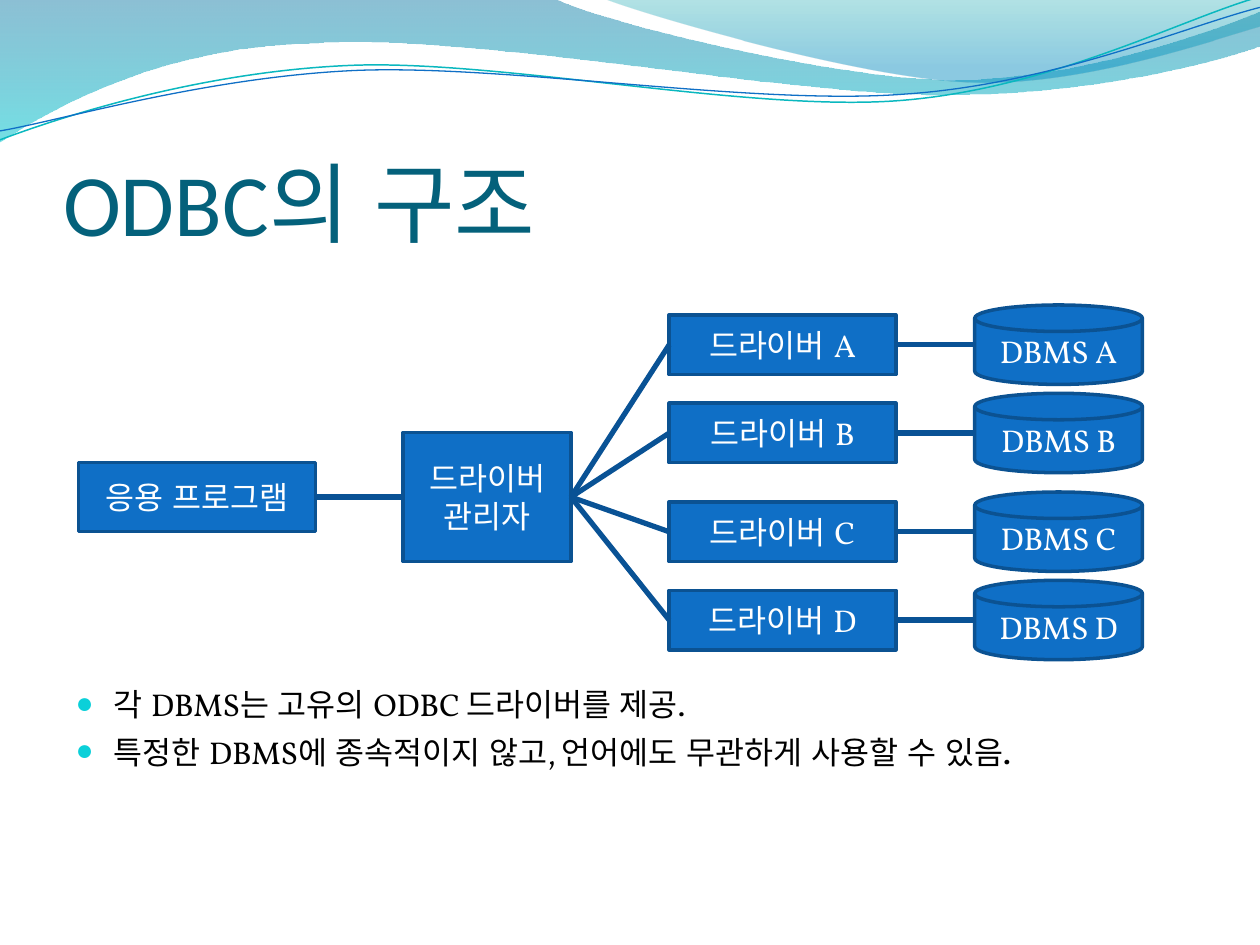
import pptx
import pptx.dml.color
import pptx.enum.lang
import pptx.enum.shapes
import pptx.enum.text
import pptx.oxml.ns
import pptx.util
from dataclasses import dataclass
from lxml import etree

Cm = pptx.util.Cm
Pt = pptx.util.Pt
SHAPE = pptx.enum.shapes.MSO_SHAPE
ALIGN = pptx.enum.text.PP_ALIGN
ANCHOR = pptx.enum.text.MSO_ANCHOR
qn = pptx.oxml.ns.qn


@dataclass(frozen=True)
class Theme:
    heading_font: str = "Calibri"
    text_font: str = "Vollkorn"
    heading: str = "04617B"
    text: str = "000000"
    on_box: str = "FFFFFF"
    box: str = "0F6FC6"
    outline: str = "0B5292"
    link: str = "095295"
    bullet: str = "0BD0D9"
    wave_teal: str = "0AB8BF"
    wave_blue: str = "0F6FC6"
    heading_size: float = 50
    text_size: float = 18
    stop_size: float = 20


def color(code):
    return pptx.dml.color.RGBColor.from_string(code)


class SlideBuilder:
    def __init__(self, page, theme):
        self.page = page
        self.theme = theme

    def style(self, para, size, code, font):
        para.font.size = Pt(size)
        para.font.name = font
        para.font.color.rgb = color(code)
        for span in para.runs:
            span.font.language_id = pptx.enum.lang.MSO_LANGUAGE_ID.KOREAN

    def place(self, box, left, top, width, height):
        box.left, box.top = Cm(left), Cm(top)
        box.width, box.height = Cm(width), Cm(height)

    def title(self, text, *frame):
        box = self.page.shapes.title
        self.place(box, *frame)
        body = box.text_frame
        body.text = text
        body.auto_size = pptx.enum.text.MSO_AUTO_SIZE.NONE
        body.vertical_anchor = ANCHOR.BOTTOM
        body.margin_left = body.margin_right = body.margin_bottom = 0
        para = body.paragraphs[0]
        para.alignment = ALIGN.LEFT
        self.style(para, self.theme.heading_size, self.theme.heading, self.theme.heading_font)

    def bullets(self, lines, top_margin, *frame):
        box = self.page.placeholders[1]
        self.place(box, *frame)
        body = box.text_frame
        body.auto_size = pptx.enum.text.MSO_AUTO_SIZE.NONE
        body.margin_top = Cm(top_margin)
        body.text = "\n".join(lines)
        for para in body.paragraphs:
            para.space_before = Pt(4)
            props = para._p.get_or_add_pPr()
            props.set("marL", str(Cm(0.76)))
            props.set("indent", str(-Cm(0.76)))
            tint = etree.SubElement(props, qn("a:buClr"))
            etree.SubElement(tint, qn("a:srgbClr"), val=self.theme.bullet)
            etree.SubElement(props, qn("a:buSzPct"), val="95000")
            etree.SubElement(props, qn("a:buChar"), char="●")
            self.style(para, self.theme.text_size, self.theme.text, self.theme.text_font)
        return body.paragraphs

    def node(self, kind, text, left, middle, width, height):
        box = self.page.shapes.add_shape(
            kind, Cm(left), Cm(middle - height / 2), Cm(width), Cm(height)
        )
        box.shadow.inherit = False
        box.fill.solid()
        box.fill.fore_color.rgb = color(self.theme.box)
        box.line.color.rgb = color(self.theme.outline)
        box.line.width = Pt(2)
        body = box.text_frame
        body.text = text
        body.vertical_anchor = ANCHOR.MIDDLE
        for para in body.paragraphs:
            para.alignment = ALIGN.CENTER
            self.style(para, self.theme.text_size, self.theme.on_box, self.theme.text_font)

    def link(self, *ends):
        line = self.page.shapes.add_connector(
            pptx.enum.shapes.MSO_CONNECTOR.STRAIGHT, *map(Cm, ends)
        )
        line.line.color.rgb = color(self.theme.link)
        line.line.width = Pt(3)
        etree.SubElement(line._element.spPr, qn("a:effectLst"))

    def outline(self, start, segments, close):
        unit = Cm(0.01)
        ends = [segment[-1] for segment in segments]
        builder = self.page.shapes.build_freeform(
            start[0] * 100, start[1] * 100, scale=unit
        )
        builder.add_line_segments([(x * 100, y * 100) for x, y in ends], close=close)
        shape = builder.convert_to_shape()
        shape.shadow.inherit = False
        steps = list(shape._element.iter(qn("a:lnTo")))
        for step, segment in zip(steps, segments):
            if len(segment) == 3:
                curve = etree.Element(qn("a:cubicBezTo"))
                for x, y in segment:
                    etree.SubElement(
                        curve, qn("a:pt"),
                        x=str(round((Cm(x) - shape.left) / unit)),
                        y=str(round((Cm(y) - shape.top) / unit)),
                    )
                step.getparent().replace(step, curve)
        return shape

    def wave(self, start, segments, stops):
        shape = self.outline(start, segments, True)
        shape.line.fill.background()
        shape.fill.gradient()
        shape.fill.gradient_angle = 270
        for stop, (position, code, opacity) in zip(shape.fill.gradient_stops, stops):
            stop.position = position
            stop.color.rgb = color(code)
            tint = stop._gs.find(qn("a:srgbClr"))
            etree.SubElement(tint, qn("a:alpha"), val=str(opacity * 1000))

    def ripple(self, start, segments, code, width):
        shape = self.outline(start, segments, False)
        shape.fill.background()
        shape.line.color.rgb = color(code)
        shape.line.width = Pt(width)


def main():
    deck = pptx.Presentation()
    deck.slide_width, deck.slide_height = Cm(25.4), Cm(19.05)
    theme = Theme()
    slide = SlideBuilder(deck.slides.add_slide(deck.slide_layouts[1]), theme)

    slide.wave(
        (0, 0),
        [
            [(11.18, -0.03)],
            [(12.09, 0.43), (16.87, 1.6), (19.25, 1.6)],
            [(21.67, 1.6), (24.33, 0.66), (25.4, 0.23)],
            [(25.43, 0.91)],
            [(24.97, 1.12), (22.1, 1.93), (18.95, 1.91)],
            [(15.8, 1.91), (9.7, 0.71), (6.53, 0.86)],
            [(3.28, 0.91), (1.17, 2.11), (-0.03, 2.87)],
        ],
        [(0, "0074A1", 45), (1, "00C6CF", 55)],
    )
    slide.wave(
        (12.17, -0.03),
        [
            [(12.93, 0.28), (17.32, 1.57), (19.53, 1.65)],
            [(21.74, 1.75), (24.41, 0.81), (25.4, 0.53)],
            [(25.4, 0)],
        ],
        [(0, "00A1A9", 30), (0.8, "008BBF", 45)],
    )
    slide.ripple(
        (0, 2.82),
        [
            [(1.22, 2.36), (4.01, 1.45), (7.04, 1.32)],
            [(10.03, 1.19), (15.06, 2.26), (18.11, 2.03)],
            [(21.16, 1.8), (23.83, 0.38), (25.35, -0.05)],
        ],
        theme.wave_teal, 0.85,
    )
    slide.ripple(
        (0, 2.64),
        [
            [(1.19, 2.44), (4.17, 1.55), (7.19, 1.42)],
            [(10.24, 1.3), (15.16, 2.13), (18.21, 1.9)],
            [(21.23, 1.7), (23.9, 0.53), (25.4, 0.15)],
        ],
        theme.wave_blue, 0.75,
    )

    slide.title("ODBC의 구조", 1.27, 1.95, 22.86, 3.18)
    paras = slide.bullets(
        ["각 DBMS는 고유의 ODBC 드라이버를 제공.",
         "특정한 DBMS에 종속적이지 않고, 언어에도 무관하게 사용할 수 있음"],
        8.42, 1.27, 5.38, 22.86, 12.19,
    )
    stop = paras[-1].add_run()
    stop.text = "."
    stop.font.size = Pt(theme.stop_size)

    center = 10.02
    slide.node(SHAPE.RECTANGLE, "응용 프로그램", 1.58, center, 4.78, 1.4)
    slide.node(SHAPE.RECTANGLE, "드라이버\n관리자", 8.13, center, 3.38, 2.6)
    slide.link(6.36, center, 8.13, center)
    for letter, middle in zip("ABCD", (6.95, 8.73, 10.72, 12.5)):
        slide.node(SHAPE.RECTANGLE, f"드라이버 {letter}", 13.49, middle, 4.57, 1.2)
        slide.node(SHAPE.FLOWCHART_MAGNETIC_DISK, f"DBMS {letter}", 19.65, middle, 3.38, 1.6)
        slide.link(11.51, center, 13.49, middle)
        slide.link(18.06, middle, 19.65, middle)

    deck.save("out.pptx")


if __name__ == "__main__":
    main()
